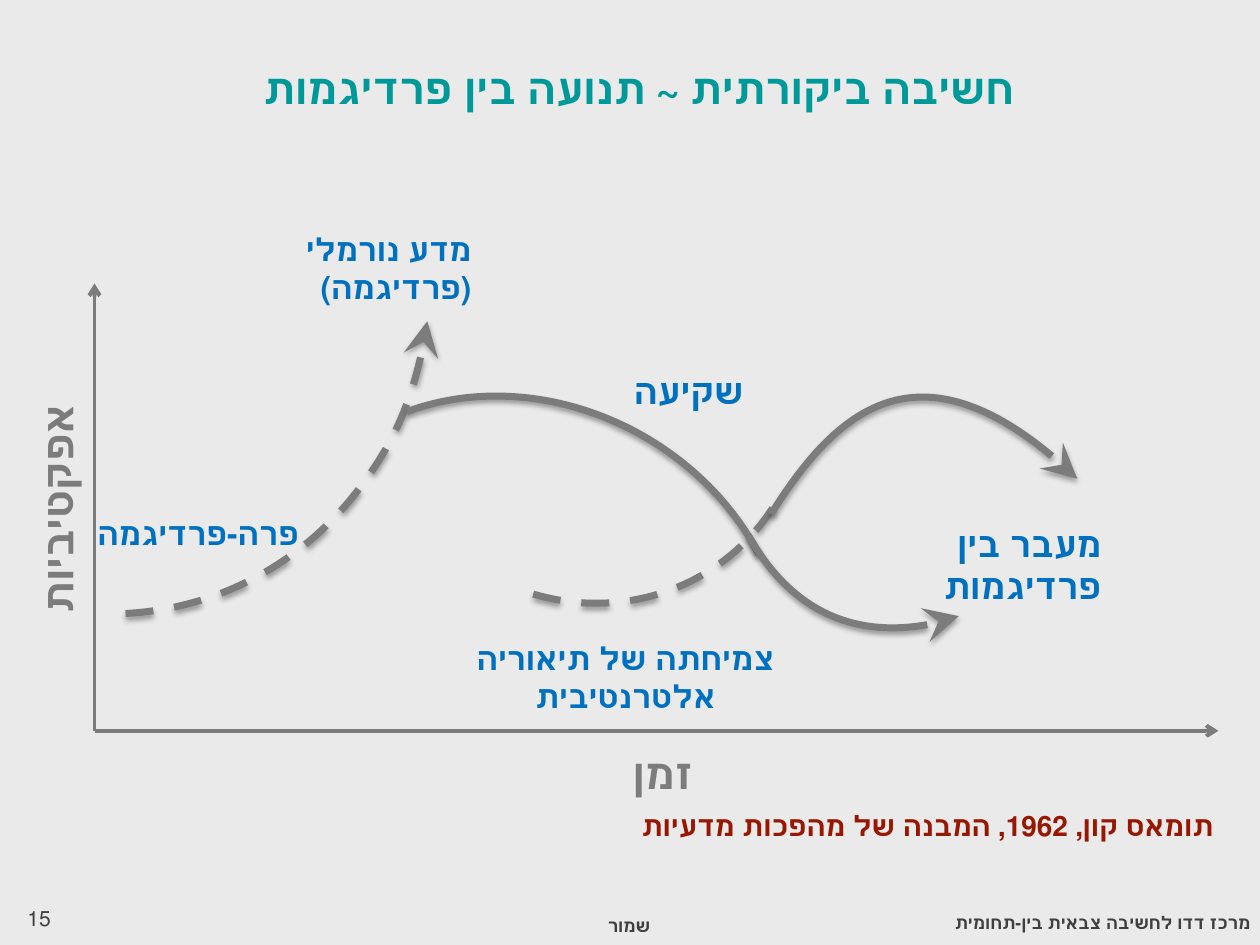
from lxml import etree
from pptx import Presentation
from pptx import util as u
from pptx.dml.color import RGBColor
from pptx.enum import dml, shapes, text
from pptx.oxml.ns import qn

BACKGROUND = RGBColor(0xEA, 0xEA, 0xEA)
TEAL = RGBColor(0x00, 0x99, 0x99)
BLUE = RGBColor(0x00, 0x70, 0xC0)
GRAY = RGBColor(0x7C, 0x7C, 0x7C)
DARK = RGBColor(0x3F, 0x3F, 0x3F)
RED = RGBColor(0x98, 0x17, 0x02)

LEFT, CENTER, RIGHT = text.PP_ALIGN.LEFT, text.PP_ALIGN.CENTER, text.PP_ALIGN.RIGHT
TOP, MIDDLE = text.MSO_ANCHOR.TOP, text.MSO_ANCHOR.MIDDLE
COLUMNS, ROWS = 100, 75


def cells(*counts):
    """Turn counts of grid cells, a tenth of an inch each, into lengths."""
    return [u.Inches(n / 10) for n in counts]


class Diagram:
    """Holds the style and the slide; positions are in grid columns and rows."""

    font = "Calibri"
    axis_width = u.Pt(2.25)
    curve_width = u.Pt(4)

    def __init__(self, prs):
        self.s = prs.slides.add_slide(prs.slide_layouts[6])
        fill = self.s.background.fill
        fill.solid()
        fill.fore_color.rgb = BACKGROUND

    def label(self, words, box, size, color, align=RIGHT, bold=True,
              anchor=TOP, rotation=0):
        sp = self.s.shapes.add_textbox(*cells(*box))
        sp.rotation = rotation
        tf = sp.text_frame
        tf.word_wrap = True
        tf.vertical_anchor = anchor
        tf.text = words
        p = tf.paragraphs[0]
        p.alignment = align
        p._p.get_or_add_pPr().set("rtl", "1")
        font = p.runs[0].font
        font.name, font.size, font.bold = self.font, u.Pt(size), bold
        font.color.rgb = color

    def axis(self, start, end):
        line = self.s.shapes.add_connector(
            shapes.MSO_CONNECTOR.STRAIGHT, *cells(*start, *end))
        self._stroke(line, self.axis_width)
        self._arrow(line, "tailEnd", "arrow", "med")
        etree.SubElement(line._element.spPr, qn("a:effectLst"))

    def arc(self, box, angles, rotation, dashed=False, arrow=False):
        """Draw an arc between two angles in degrees, flipped, then rotated."""
        sp = self.s.shapes.add_shape(shapes.MSO_SHAPE.ARC, *cells(*box))
        for i, angle in enumerate(angles):
            sp.adjustments[i] = angle * 0.6
        sp.rotation = rotation
        sp._element.spPr.xfrm.set("flipV", "1")
        self._curve_style(sp, dashed)
        if arrow:
            self._arrow(sp, "tailEnd", "stealth", "lg")

    def curve(self, *points):
        """Draw a Bezier curve of four points with an arrowhead at the first."""
        start, *rest = [cells(*point) for point in points]
        builder = self.s.shapes.build_freeform(*start)
        builder.add_line_segments(rest, close=False)
        sp = builder.convert_to_shape()
        path = sp._element.spPr.find(".//" + qn("a:path"))
        segments = path.findall(qn("a:lnTo"))
        bezier = etree.SubElement(path, qn("a:cubicBezTo"))
        for segment in segments:
            bezier.append(segment[0])
            path.remove(segment)
        self._curve_style(sp)
        self._arrow(sp, "headEnd", "stealth", "lg")

    def _stroke(self, sp, width):
        sp.line.color.rgb = GRAY
        sp.line.width = width

    def _arrow(self, sp, end, kind, size):
        etree.SubElement(sp.line._get_or_add_ln(), qn("a:" + end),
                         type=kind, w=size, len=size)

    def _curve_style(self, sp, dashed=False):
        sp.fill.background()
        self._stroke(sp, self.curve_width)
        if dashed:
            sp.line.dash_style = dml.MSO_LINE.DASH
        sp.shadow.inherit = False
        effects = sp._element.spPr.find(qn("a:effectLst"))
        shadow = etree.SubElement(effects, qn("a:outerShdw"), blurRad="40000",
                                  dist="23000", dir="5400000", rotWithShape="0")
        black = etree.SubElement(shadow, qn("a:srgbClr"), val="000000")
        etree.SubElement(black, qn("a:alpha"), val="35000")


def main():
    prs = Presentation()
    prs.slide_width, prs.slide_height = cells(COLUMNS, ROWS)
    d = Diagram(prs)

    d.label("15", (1.2, 71.4, 23.3, 4), 12, DARK, LEFT, bold=False)
    d.label("שמור", (38.9, 72.1, 13.7, 4), 10, DARK)
    d.label("חשיבה ביקורתית ~ תנועה בין פרדיגמות", (5.7, 4.5, 90, 12.5),
            24, TEAL, CENTER)

    origin = (7.5, 58)
    d.axis(origin, (7.5, 22.5))
    d.axis(origin, (96.7, 58))
    d.label("זמן", (36.6, 58.8, 19.4, 5), 24, GRAY)
    d.label("אפקטיביות", (-5.2, 38.3, 19.4, 5), 24, GRAY, rotation=270)

    d.label("מדע נורמלי (פרדיגמה)", (23.1, 17.8, 15.3, 7.1), 18, BLUE)
    d.label("צמיחתה של תיאוריה אלטרנטיבית", (35, 50.2, 29.3, 7.1),
            18, BLUE, CENTER)
    d.label("שקיעה", (40.6, 28.8, 19.4, 4.4), 20, BLUE)
    d.label("מעבר בין פרדיגמות", (61.8, 41, 26.6, 4.4), 20, BLUE)
    d.label("תומאס קון, 1962, המבנה של מהפכות מדעיות",
            (40.6, 63.7, 56.7, 3.7), 16, RED)
    d.label("פרה-פרדיגמה", (4.4, 40.3, 20.3, 4), 18, BLUE)

    d.arc((-19.6, -9.6, 53.5, 58.6), (256.14, 328.36), 340.6,
          dashed=True, arrow=True)
    d.arc((20.8, 32.2, 42.4, 36.5), (229.38, 328.36), 209.8)
    d.curve((76.1, 48.9), (69.6, 51.3), (62.9, 48.7), (59.4, 42.5))
    d.arc((29, 11.4, 34.8, 36.8), (222.38, 291.27), 325.6, dashed=True)
    d.curve((85.5, 38), (73.3, 26.3), (66.2, 32.8), (61.2, 40.8))

    d.label("מרכז דדו לחשיבה צבאית בין-תחומית", (74.8, 71.2, 25.5, 4),
            10, DARK, LEFT, anchor=MIDDLE)
    prs.save("out.pptx")


if __name__ == "__main__":
    main()
